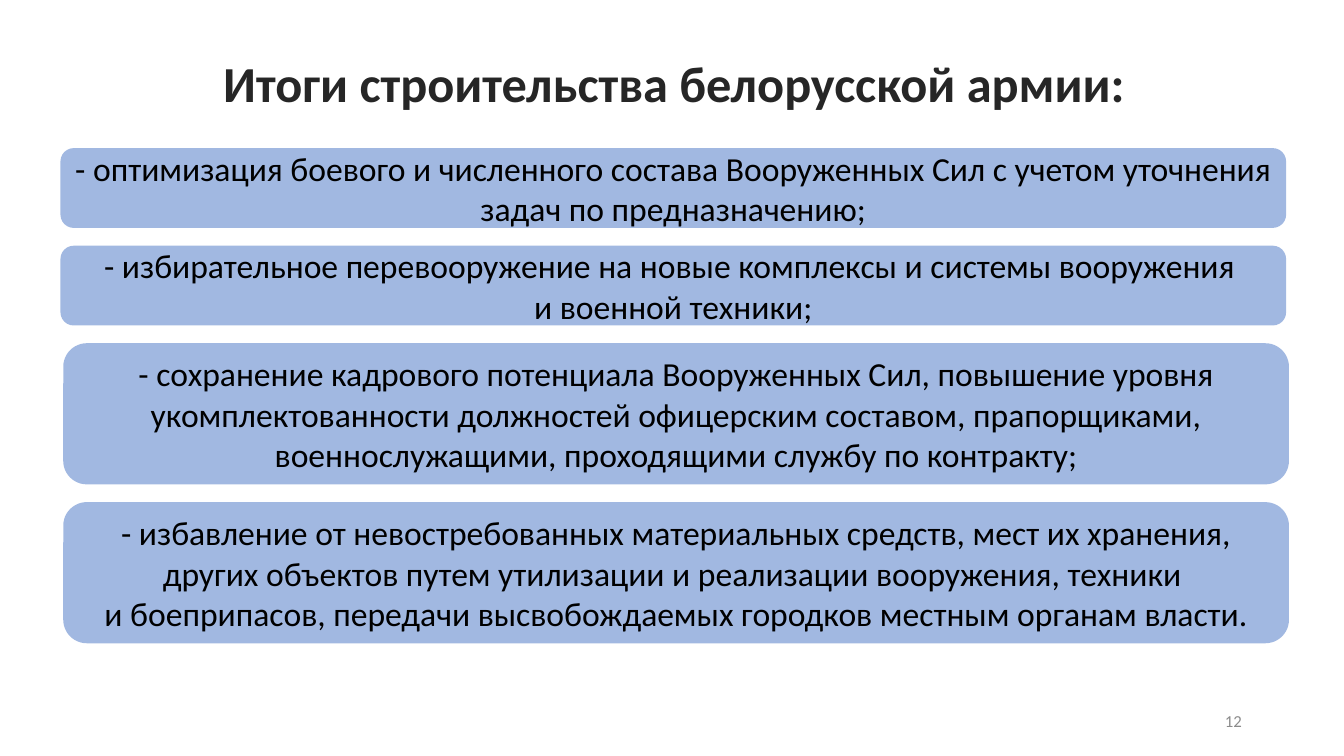
from dataclasses import dataclass

import pptx
import pptx.dml.color
import pptx.enum.shapes
import pptx.enum.text
import pptx.oxml.ns
import pptx.util
from lxml import etree

Pt = pptx.util.Pt
ALIGN = pptx.enum.text.PP_ALIGN
FONT = "Calibri"
PANEL_WIDTH = 875.5
PANEL_GAP = 12.7
FIRST_PANEL_TOP = 105.8


@dataclass
class Panel:
    left: float
    height: float
    lines: list[str]


PANELS = [
    Panel(43.2, 57, ["- оптимизация боевого и численного состава Вооруженных Сил "
                     "с учетом уточнения задач по предназначению;"]),
    Panel(43.2, 57, ["- избирательное перевооружение на новые комплексы и системы вооружения ",
                     "и военной техники;"]),
    Panel(45.2, 100.8, ["- сохранение кадрового потенциала Вооруженных Сил, повышение уровня "
                        "укомплектованности должностей офицерским составом, прапорщиками, "
                        "военнослужащими, проходящими службу по контракту;"]),
    Panel(45.2, 100.8, ["- избавление от невостребованных материальных средств, мест их хранения, "
                        "других объектов путем утилизации и реализации вооружения, техники ",
                        "и боеприпасов, передачи высвобождаемых городков местным органам власти."]),
]


def set_color(target: pptx.dml.color.ColorFormat, color: str) -> None:
    target.rgb = pptx.dml.color.RGBColor.from_string(color)


def write_text(shape, lines: list[str], size: float, color: str,
               align=ALIGN.CENTER, bold: bool = False, spacing: float = 1.0) -> None:
    """Fill a shape with one paragraph, breaking between the given lines."""
    frame = shape.text_frame
    frame.word_wrap = True
    frame.vertical_anchor = pptx.enum.text.MSO_ANCHOR.MIDDLE
    paragraph = frame.paragraphs[0]
    paragraph.alignment = align
    paragraph.line_spacing = spacing
    for index, line in enumerate(lines):
        if index:
            paragraph.add_line_break()
        run = paragraph.add_run()
        run.text = line
        run.font.name = FONT
        run.font.size = Pt(size)
        run.font.bold = bold
        set_color(run.font.color, color)


def draw_panel(slide, panel: Panel, top: float) -> None:
    shape = slide.shapes.add_shape(
        pptx.enum.shapes.MSO_SHAPE.ROUNDED_RECTANGLE,
        Pt(panel.left), Pt(top), Pt(PANEL_WIDTH), Pt(panel.height))
    shape.shadow.inherit = False
    shape.line.fill.background()
    shape.fill.solid()
    set_color(shape.fill.fore_color, "4472C4")
    # Half-transparent fill
    qn = pptx.oxml.ns.qn
    fill_color = shape.fill._xPr.find(qn("a:solidFill")).find(qn("a:srgbClr"))
    etree.SubElement(fill_color, qn("a:alpha")).set("val", "50000")
    write_text(shape, panel.lines, 24, "000000")


def main() -> None:
    presentation = pptx.Presentation()
    presentation.slide_width = Pt(960)
    presentation.slide_height = Pt(540)
    slide = presentation.slides.add_slide(presentation.slide_layouts[6])

    # Title
    title = slide.shapes.add_textbox(Pt(33.1), Pt(37.4), Pt(897.1), Pt(48.2))
    write_text(title, ["Итоги строительства белорусской армии:"], 36, "262626",
               bold=True, spacing=0.9)

    # Stacked panels
    top = FIRST_PANEL_TOP
    for panel in PANELS:
        draw_panel(slide, panel, top)
        top += panel.height + PANEL_GAP

    # Slide number
    number = slide.shapes.add_textbox(Pt(678.2), Pt(500.4), Pt(216), Pt(28.8))
    write_text(number, ["12"], 12, "8C8C8C", align=ALIGN.RIGHT)

    presentation.save("out.pptx")


if __name__ == "__main__":
    main()
